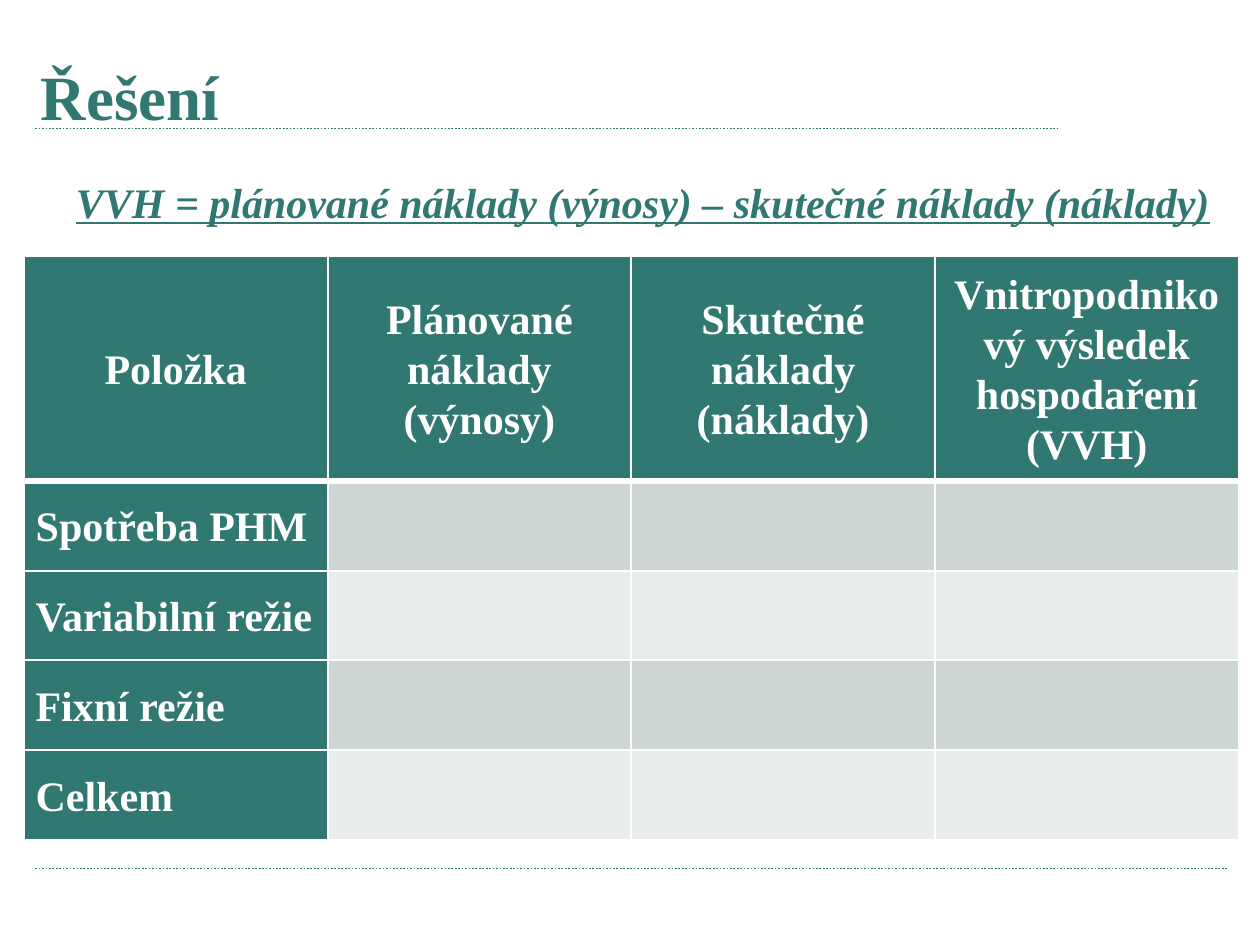
import dataclasses
import typing

import pptx
import pptx.dml.color
import pptx.enum.dml
import pptx.enum.shapes
import pptx.enum.text
import pptx.oxml
import pptx.oxml.ns
import pptx.util

SLIDE_WIDTH = pptx.util.Pt(540)
SLIDE_HEIGHT = pptx.util.Pt(405)
GREEN, WHITE = "307871", "FFFFFF"
BANDS = ("CDD6D5", "E8ECEB")
ALIGN = pptx.enum.text.PP_ALIGN
MIDDLE = pptx.enum.text.MSO_ANCHOR.MIDDLE

HEADINGS = (
    "Položka",
    "Plánované náklady (výnosy)",
    "Skutečné náklady (náklady)",
    "Vnitropodnikový výsledek hospodaření (VVH)",
)
ITEMS = ("Spotřeba PHM", "Variabilní režie", "Fixní režie", "Celkem")
HEADER_PERCENT = 23.8
ITEM_PERCENT = 9.5

BASE_FONT = {"name": "Times New Roman", "size": pptx.util.Pt(18), "bold": True}
TITLE_FONT = BASE_FONT | {"size": pptx.util.Pt(27)}
FORMULA_FONT = BASE_FONT | {"italic": True, "underline": True}
CELL_FORMAT = {
    "vertical_anchor": MIDDLE,
    "margin_left": pptx.util.Inches(0.07),
    "margin_right": pptx.util.Inches(0.07),
    "margin_top": 0,
    "margin_bottom": 0,
}


def across(percent: float) -> int:
    return round(SLIDE_WIDTH * percent / 100)


def down(percent: float) -> int:
    return round(SLIDE_HEIGHT * percent / 100)


@dataclasses.dataclass(frozen=True)
class Area:
    """A rectangle in percent of the slide's width and height."""
    left: float
    top: float
    width: float
    height: float

    def lengths(self) -> tuple[int, int, int, int]:
        return across(self.left), down(self.top), across(self.width), down(self.height)


TITLE_AREA = Area(1.9, 4.8, 88.1, 10.5)
FORMULA_AREA = Area(3.8, 17.8, 94.5, 7.1)
TABLE_AREA = Area(1.9, 27.1, 96.4, HEADER_PERCENT + len(ITEMS) * ITEM_PERCENT)
RULES = (Area(2.8, 13.6, 81.1, 0), Area(2.8, 91.9, 94.6, 0))


def color(value: str) -> pptx.dml.color.RGBColor:
    return pptx.dml.color.RGBColor.from_string(value)


def apply_format(target: typing.Any, values: dict[str, typing.Any]) -> None:
    for name, value in values.items():
        setattr(target, name, value)


def write_text(frame: typing.Any, text: str, font: dict[str, typing.Any],
               text_color: str, alignment: typing.Any, spacing: float = 1.0) -> None:
    paragraph = frame.paragraphs[0]
    apply_format(paragraph, {"alignment": alignment, "line_spacing": spacing})
    run = paragraph.add_run()
    run.text = text
    apply_format(run.font, font)
    run.font.color.rgb = color(text_color)


def draw_rule(slide: typing.Any, area: Area) -> None:
    left, top, width, height = area.lengths()
    connector = slide.shapes.add_connector(
        pptx.enum.shapes.MSO_CONNECTOR.STRAIGHT, left, top, left + width, top + height)
    connector.line.color.rgb = color(GREEN)
    connector.line.width = pptx.util.Pt(0.75)
    connector.line.dash_style = pptx.enum.dml.MSO_LINE.ROUND_DOT
    properties = connector.element.spPr
    properties.append(properties.makeelement(pptx.oxml.ns.qn("a:effectLst"), {}))


def set_borders(cell: typing.Any, top: float, bottom: float) -> None:
    """Give the cell white borders; top and bottom are widths in points."""
    properties = cell._tc.get_or_add_tcPr()
    widths = {"lnL": 1, "lnR": 1, "lnT": top, "lnB": bottom}
    for index, (tag, points) in enumerate(widths.items()):
        properties.insert(index, pptx.oxml.parse_xml(
            f'<a:{tag} {pptx.oxml.ns.nsdecls("a")} w="{pptx.util.Pt(points)}">'
            f'<a:solidFill><a:srgbClr val="{WHITE}"/></a:solidFill></a:{tag}>'))


def draw_table(slide: typing.Any) -> None:
    rows = [HEADINGS] + [(item,) + ("",) * (len(HEADINGS) - 1) for item in ITEMS]
    table = slide.shapes.add_table(
        len(rows), len(HEADINGS), *TABLE_AREA.lengths()).table
    apply_format(table, {"first_row": False, "horz_banding": False})
    for row_index, texts in enumerate(rows):
        is_header = row_index == 0
        table.rows[row_index].height = down(HEADER_PERCENT if is_header else ITEM_PERCENT)
        for column_index, text in enumerate(texts):
            cell = table.cell(row_index, column_index)
            apply_format(cell, CELL_FORMAT)
            cell.fill.solid()
            cell.fill.fore_color.rgb = color(
                GREEN if text else BANDS[(row_index - 1) % len(BANDS)])
            set_borders(cell, top=3 if row_index == 1 else 1,
                        bottom=3 if is_header else 1)
            if text:
                write_text(cell.text_frame, text, BASE_FONT, WHITE,
                           ALIGN.CENTER if is_header else ALIGN.LEFT, 1.07)


def main() -> None:
    presentation = pptx.Presentation()
    apply_format(presentation,
                 {"slide_width": SLIDE_WIDTH, "slide_height": SLIDE_HEIGHT})
    slide = presentation.slides.add_slide(
        presentation.slide_layouts.get_by_name("Title Only"))

    for rule in RULES:
        draw_rule(slide, rule)

    title = slide.shapes.title
    formula = slide.shapes.add_textbox(*FORMULA_AREA.lengths())
    for shape, area in ((title, TITLE_AREA), (formula, FORMULA_AREA)):
        apply_format(shape, dict(zip(("left", "top", "width", "height"), area.lengths())))
        shape.text_frame.word_wrap = True
    title.text_frame.vertical_anchor = MIDDLE
    write_text(title.text_frame, "Řešení", TITLE_FONT, GREEN, ALIGN.LEFT)
    write_text(formula.text_frame,
               "VVH = plánované náklady (výnosy) – skutečné náklady (náklady)",
               FORMULA_FONT, GREEN, ALIGN.CENTER)

    draw_table(slide)
    presentation.save("out.pptx")


if __name__ == "__main__":
    main()
